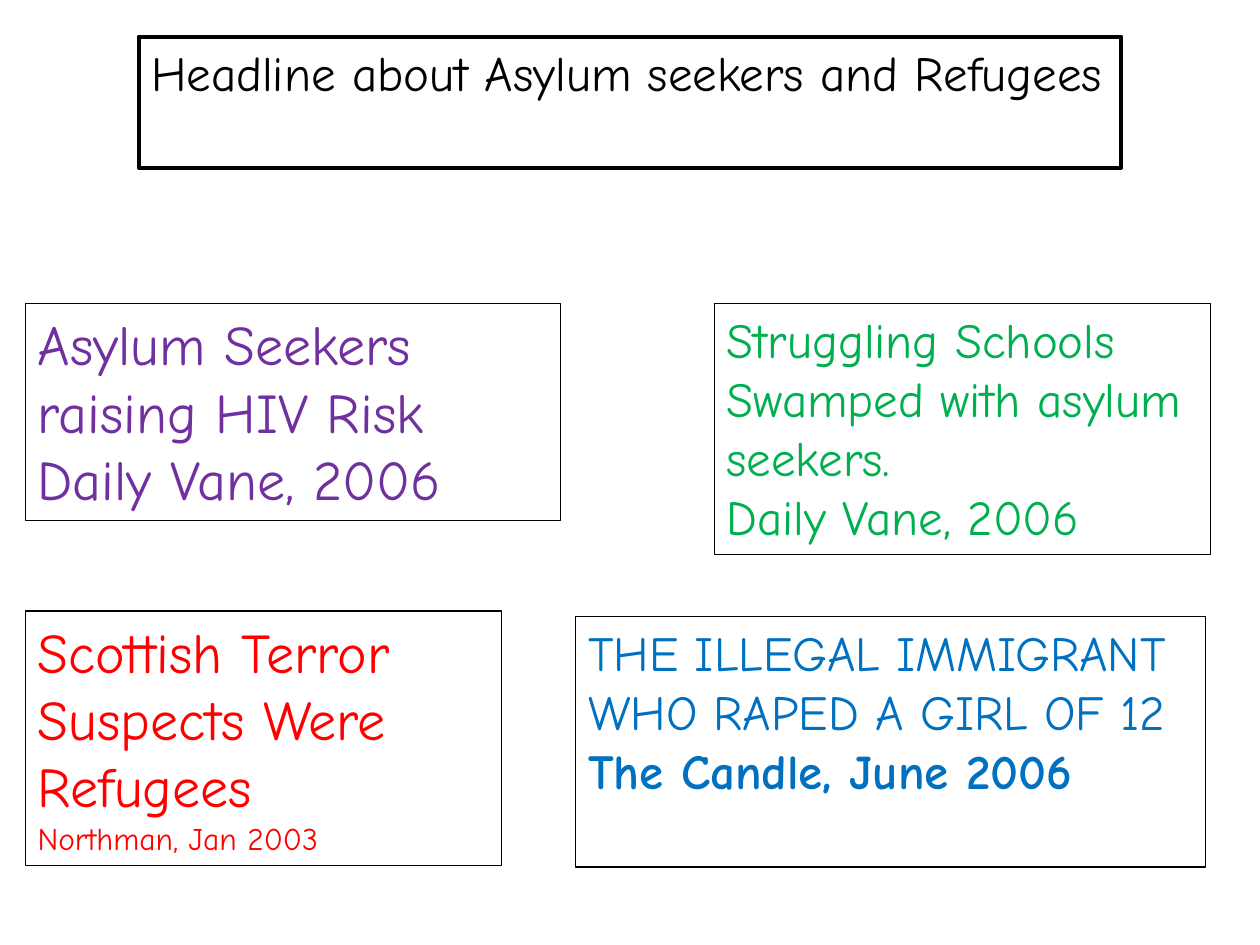
from pptx import Presentation
from pptx.dml.color import RGBColor
from pptx.enum.text import MSO_ANCHOR, MSO_AUTO_SIZE, PP_ALIGN
from pptx.util import Inches, Pt

BLACK = RGBColor(0x00, 0x00, 0x00)
RED = RGBColor(0xFF, 0x00, 0x00)
BLUE = RGBColor(0x00, 0x70, 0xC0)
GREEN = RGBColor(0x00, 0xB0, 0x50)
PURPLE = RGBColor(0x70, 0x30, 0xA0)


class HeadlineSlide:
    font_name = "Comic Neue"

    def __init__(self, presentation):
        self.slide = presentation.slides.add_slide(presentation.slide_layouts[5])

    def frame(self, shape, line_width):
        shape.line.color.rgb = BLACK
        shape.line.width = Pt(line_width)
        text_frame = shape.text_frame
        text_frame.word_wrap = True
        text_frame.auto_size = MSO_AUTO_SIZE.NONE
        text_frame.vertical_anchor = MSO_ANCHOR.TOP
        return text_frame

    def fill_paragraph(self, paragraph, text, size, color, bold=False):
        paragraph.text = text
        paragraph.alignment = PP_ALIGN.LEFT
        paragraph.font.name = self.font_name
        paragraph.font.size = Pt(size)
        paragraph.font.bold = bold
        paragraph.font.color.rgb = color

    def title(self, text, left, top, width, height):
        shape = self.slide.shapes.title
        shape.left, shape.top = Inches(left), Inches(top)
        shape.width, shape.height = Inches(width), Inches(height)
        text_frame = self.frame(shape, 2.25)
        self.fill_paragraph(text_frame.paragraphs[0], text, 28, BLACK)

    def headline(self, box, color, size, text, source, source_size=None, source_bold=False):
        shape = self.slide.shapes.add_textbox(*map(Inches, box))
        text_frame = self.frame(shape, 0.75)
        self.fill_paragraph(text_frame.paragraphs[0], text, size, color)
        self.fill_paragraph(text_frame.add_paragraph(), source, source_size or size,
                            color, source_bold)


def main():
    presentation = Presentation()
    presentation.slide_width = Inches(10)
    presentation.slide_height = Inches(7.5)

    page = HeadlineSlide(presentation)
    page.title("Headline about Asylum seekers and Refugees", 1.1, 0.29, 7.8, 1.04)
    page.headline((0.2, 2.41, 4.25, 1.72), PURPLE, 32,
                  "Asylum Seekers raising HIV Risk", "Daily Vane, 2006")
    page.headline((5.67, 2.41, 3.94, 1.99), GREEN, 28,
                  "Struggling Schools Swamped with asylum seekers.", "Daily Vane, 2006")
    page.headline((0.2, 4.85, 3.78, 2.02), RED, 32,
                  "Scottish Terror Suspects Were Refugees", "Northman, Jan 2003",
                  source_size=18)
    page.headline((4.57, 4.89, 5, 1.99), BLUE, 28,
                  "THE ILLEGAL IMMIGRANT WHO RAPED A GIRL OF 12", "The Candle, June 2006",
                  source_bold=True)

    presentation.save("out.pptx")


if __name__ == "__main__":
    main()
